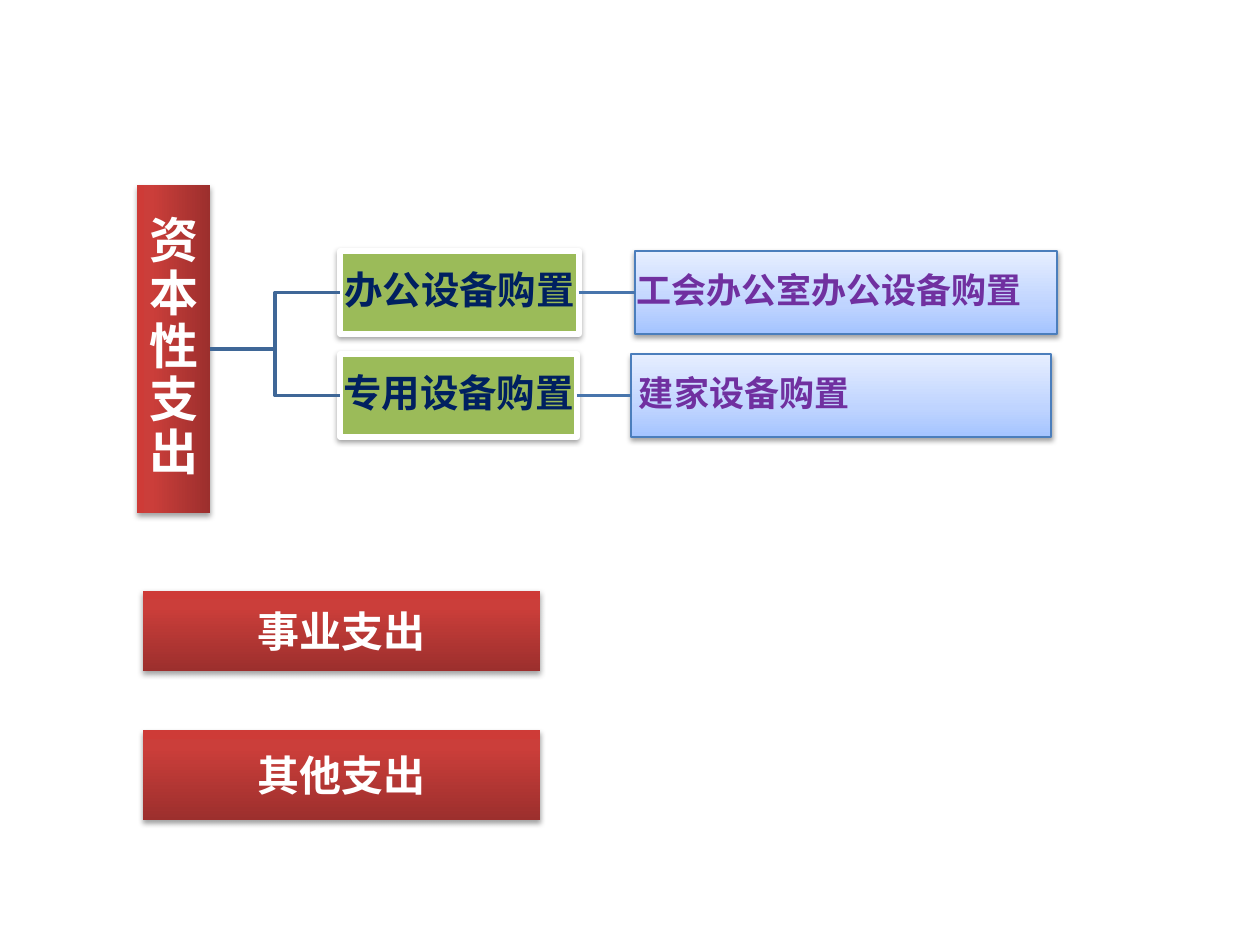
"""Build the slide that breaks union spending into its categories."""
from lxml import etree
from pptx import Presentation
from pptx.dml.color import RGBColor
from pptx.enum.shapes import MSO_CONNECTOR, MSO_SHAPE
from pptx.enum.text import MSO_ANCHOR, PP_ALIGN
from pptx.oxml.ns import qn
from pptx.util import Emu, Pt

RECTANGLE = MSO_SHAPE.RECTANGLE
STRAIGHT, ELBOW = MSO_CONNECTOR.STRAIGHT, MSO_CONNECTOR.ELBOW
MIDDLE = MSO_ANCHOR.MIDDLE
LEFT, CENTER = PP_ALIGN.LEFT, PP_ALIGN.CENTER
LEFT_SIDE, RIGHT_SIDE = 1, 3
PX = 914400 / 126

THEME = {
    "red": [(0, "9C2F2D"), (80, "CB3E3A"), (100, "CE3B37")],
    "blue": [(0, "A4C4FF"), (35, "BFD4FF"), (100, "E6EEFF")],
    "green": "9BBB59", "white": "FFFFFF", "navy": "002060", "purple": "7030A0",
    "blue_edge": "4B7EBC", "branch": "3F6797", "link": "4875AC",
    "latin": "Calibri", "chinese": "Noto Sans CJK SC",
    "root": 28, "bar": 24, "item": 22, "detail": 20,
}

deck = Presentation()
deck.slide_width, deck.slide_height = Emu(round(1260 * PX)), Emu(round(945 * PX))
page = deck.slides.add_slide(deck.slide_layouts[6])


def add_box(text, bounds, fill, size, color, angle=90, edge=None, font="latin",
            align=CENTER, inset=3, indent=3, spacing=0.9):
    box = page.shapes.add_shape(RECTANGLE, *(Emu(round(v * PX)) for v in bounds))
    properties = box._element.spPr
    if isinstance(THEME[fill], str):
        box.fill.solid()
        box.fill.fore_color.rgb = RGBColor.from_string(THEME[fill])
    else:
        box.fill.gradient()
        box.fill.gradient_angle = angle
        stops = properties.find(qn("a:gradFill")).find(qn("a:gsLst"))
        for stop in list(stops):
            stops.remove(stop)
        for position, shade in THEME[fill]:
            stop = etree.SubElement(stops, qn("a:gs"), pos=str(position * 1000))
            etree.SubElement(stop, qn("a:srgbClr"), val=shade)
    if edge:
        box.line.color.rgb = RGBColor.from_string(THEME[edge[0]])
        box.line.width = Pt(edge[1])
    else:
        box.line.fill.background()

    box.shadow.inherit = False
    shadow = etree.SubElement(
        properties.find(qn("a:effectLst")), qn("a:outerShdw"), blurRad=str(Pt(3.1)),
        dist=str(Pt(1.7)), dir="5400000", rotWithShape="0")
    black = etree.SubElement(shadow, qn("a:srgbClr"), val="000000")
    etree.SubElement(black, qn("a:alpha"), val="36000")

    frame = box.text_frame
    frame.text = text
    frame.word_wrap = True
    frame.vertical_anchor = MIDDLE
    frame.margin_left = Emu(round(indent * PX))
    frame.margin_right = frame.margin_top = frame.margin_bottom = Emu(round(inset * PX))
    para = frame.paragraphs[0]
    para.alignment, para.line_spacing = align, spacing
    span = para.runs[0]
    span.font.name, span.font.size, span.font.bold = THEME[font], Pt(THEME[size]), True
    span.font.color.rgb = RGBColor.from_string(THEME[color])
    return box


def join(kind, start, end, color):
    line = page.shapes.add_connector(kind, 0, 0, 0, 0)
    line.begin_connect(start, RIGHT_SIDE)
    line.end_connect(end, LEFT_SIDE)
    line.line.color.rgb = RGBColor.from_string(THEME[color])
    line.line.width = Pt(2)
    etree.SubElement(line._element.spPr, qn("a:effectLst"))


root = add_box("资本性支出", (137, 185, 73, 328), "red", "root", "white", angle=180)

branches = [
    ("办公设备购置", 239, "工会办公室办公设备购置", 635, 422, 1),
    ("专用设备购置", 237, "建家设备购置", 631, 420, 8),
]
for row, (name, width, detail_text, left, detail_width, indent) in enumerate(branches):
    top = 251 + row * 103
    item = add_box(name, (340, top, width, 83), "green", "item", "navy",
                   edge=("white", 3))
    detail = add_box(detail_text, (left, top, detail_width, 83), "blue", "detail",
                     "purple", edge=("blue_edge", 0.75), font="chinese", align=LEFT,
                     inset=1, indent=indent)
    join(ELBOW, root, item, "branch")
    join(STRAIGHT, item, detail, "link")

for name, top, height in [("事业支出", 591, 80), ("其他支出", 730, 90)]:
    add_box(name, (143, top, 397, height), "red", "bar", "white", spacing=1.0)

deck.save("out.pptx")
